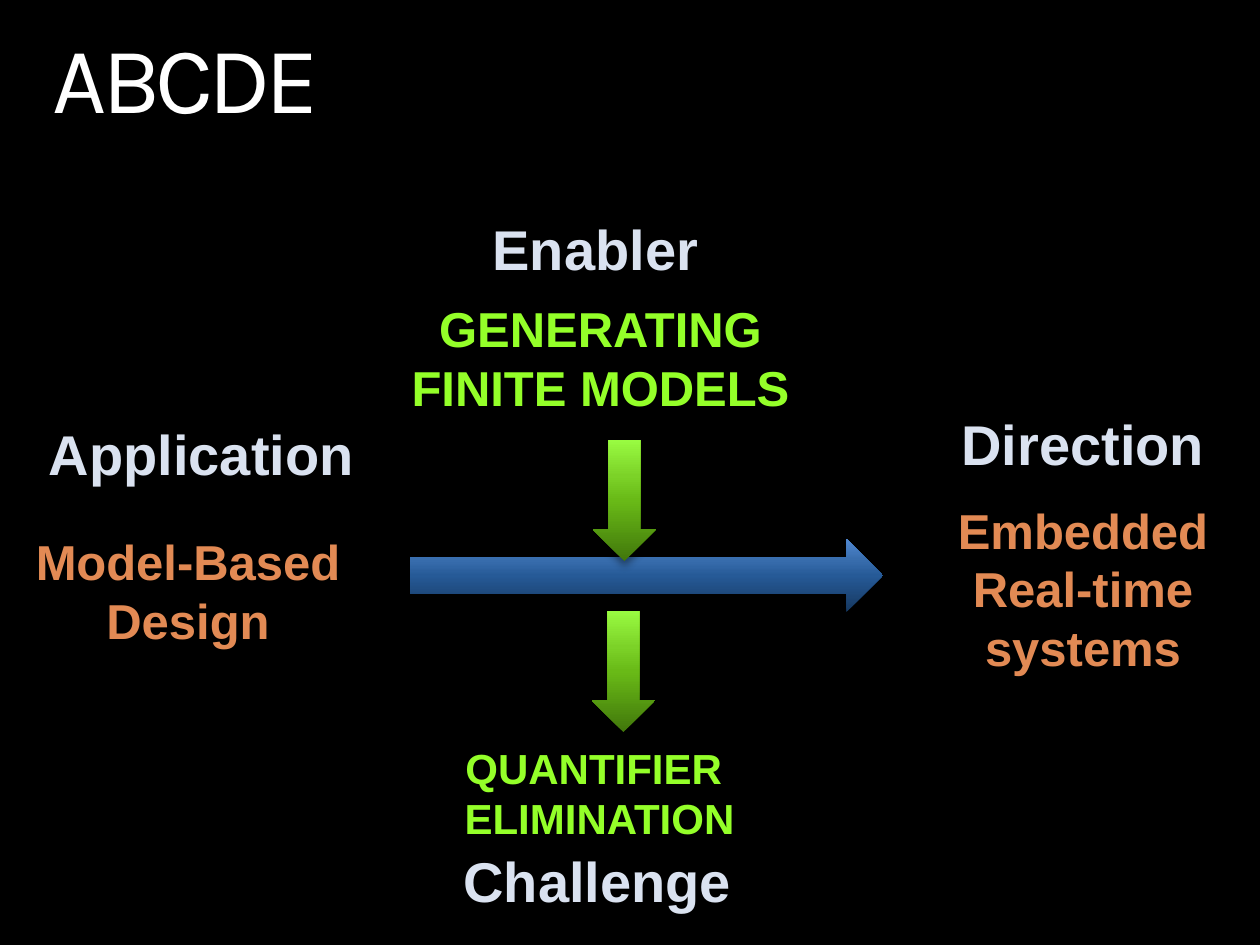
import lxml.etree
import pptx
import pptx.dml.color
import pptx.enum.shapes
import pptx.enum.text
import pptx.oxml.ns
import pptx.util

PX = 914400 / 126
COLORS = {
    "background": "000000",
    "title": "FFFFFF",
    "heading": "DAE2F0",
    "technique": "94FF29",
    "domain": "E28A54",
    "shadow": "000000",
}
BLUE_STOPS = [(0, "163860"), (50, "265A97"), (70, "376CAC"), (100, "5188D0")]
GREEN_STOPS = [(0, "41770B"), (50, "69BA17"), (70, "7CD228"), (100, "99FB41")]
TOPICS = [
    ((397, 208, 407, 215), "Enabler", (82, 0, 233, 81),
     ["GENERATING", "FINITE MODELS"], (0, 84, 407, 131), 28, "technique"),
    ((450, 736, 298, 185), "Challenge", (0, 104, 295, 81),
     ["QUANTIFIER ", "ELIMINATION"], (1, 0, 297, 115), 24, "technique"),
    ((21, 413, 347, 243), "Application", (14, 0, 333, 81),
     ["Model-Based", "Design"], (0, 112, 334, 131), 28, "domain"),
    ((944, 403, 278, 281), "Direction", (4, 0, 270, 81),
     ["Embedded", "Real-time", "systems"], (0, 91, 278, 190), 28, "domain"),
]


def rgb(name):
    return pptx.dml.color.RGBColor.from_string(COLORS[name])


def place(box, part):
    left, top, width, height = part
    return [round(n * PX) for n in (box[0] + left, box[1] + top, width, height)]


def add_run(paragraph, text, size, color, face="Arial", bold=True):
    run = paragraph.add_run()
    run.text = text
    run.font.size = pptx.util.Pt(size)
    run.font.name = face
    run.font.bold = bold
    run.font.color.rgb = rgb(color)
    return run


def add_lines(slide, box, part, lines, size, color):
    frame = slide.shapes.add_textbox(*place(box, part)).text_frame
    frame.word_wrap = False
    frame.auto_size = pptx.enum.text.MSO_AUTO_SIZE.SHAPE_TO_FIT_TEXT
    for index, line in enumerate(lines):
        paragraph = frame.add_paragraph() if index else frame.paragraphs[0]
        paragraph.alignment = pptx.enum.text.PP_ALIGN.CENTER
        add_run(paragraph, line, size, color)


def add_title(slide, box):
    frame = slide.shapes.add_textbox(*place(box, (0, 0, *box[2:]))).text_frame
    frame.word_wrap = True
    frame.margin_left = frame.margin_right = 0
    frame.margin_top = frame.margin_bottom = 0
    paragraph = frame.paragraphs[0]
    paragraph.line_spacing = 0.9
    run = add_run(paragraph, "ABCDE", 54, "title", "Karla", False)
    run.font._element.set("spc", "-300")


def add_topic(slide, box, heading, heading_part, detail, detail_part, size, color):
    add_lines(slide, box, detail_part, detail, size, color)
    add_lines(slide, box, heading_part, [heading], 32, "heading")


def add_child(parent, tag, **attributes):
    child = lxml.etree.SubElement(parent, pptx.oxml.ns.qn(tag))
    for key, value in attributes.items():
        child.set(key, str(value))
    return child


def add_arrow(slide, box, part, direction, stops):
    arrow = slide.shapes.add_shape(direction, *place(box, part))
    arrow.line.fill.background()
    arrow.fill.gradient()
    arrow.fill.gradient_angle = 90
    properties = arrow._element.spPr
    stop_list = properties.find(".//" + pptx.oxml.ns.qn("a:gsLst"))
    for stop in list(stop_list):
        stop_list.remove(stop)
    for position, color in stops:
        stop = add_child(stop_list, "a:gs", pos=position * 1000)
        add_child(stop, "a:srgbClr", val=color)
    arrow.shadow.inherit = False
    effects = properties.find(pptx.oxml.ns.qn("a:effectLst"))
    shadow = add_child(effects, "a:outerShdw", blurRad=pptx.util.Pt(5),
                       dist=pptx.util.Pt(3), dir=5400000, rotWithShape=0)
    shade = add_child(shadow, "a:srgbClr", val=COLORS["shadow"])
    add_child(shade, "a:alpha", val=45000)


def add_flow(slide, box):
    shapes = pptx.enum.shapes.MSO_SHAPE
    add_arrow(slide, box, (0, 99, 473, 73), shapes.RIGHT_ARROW, BLUE_STOPS)
    for part in ((183, 0, 63, 121), (182, 171, 63, 121)):
        add_arrow(slide, box, part, shapes.DOWN_ARROW, GREEN_STOPS)


def main():
    presentation = pptx.Presentation()
    presentation.slide_width = pptx.util.Inches(10)
    presentation.slide_height = pptx.util.Inches(7.5)
    slide = presentation.slides.add_slide(presentation.slide_layouts[6])
    slide.background.fill.solid()
    slide.background.fill.fore_color.rgb = rgb("background")
    add_title(slide, (53, 32, 1155, 103))
    add_flow(slide, (410, 440, 473, 292))
    for topic in TOPICS:
        add_topic(slide, *topic)
    presentation.save("out.pptx")


if __name__ == "__main__":
    main()
